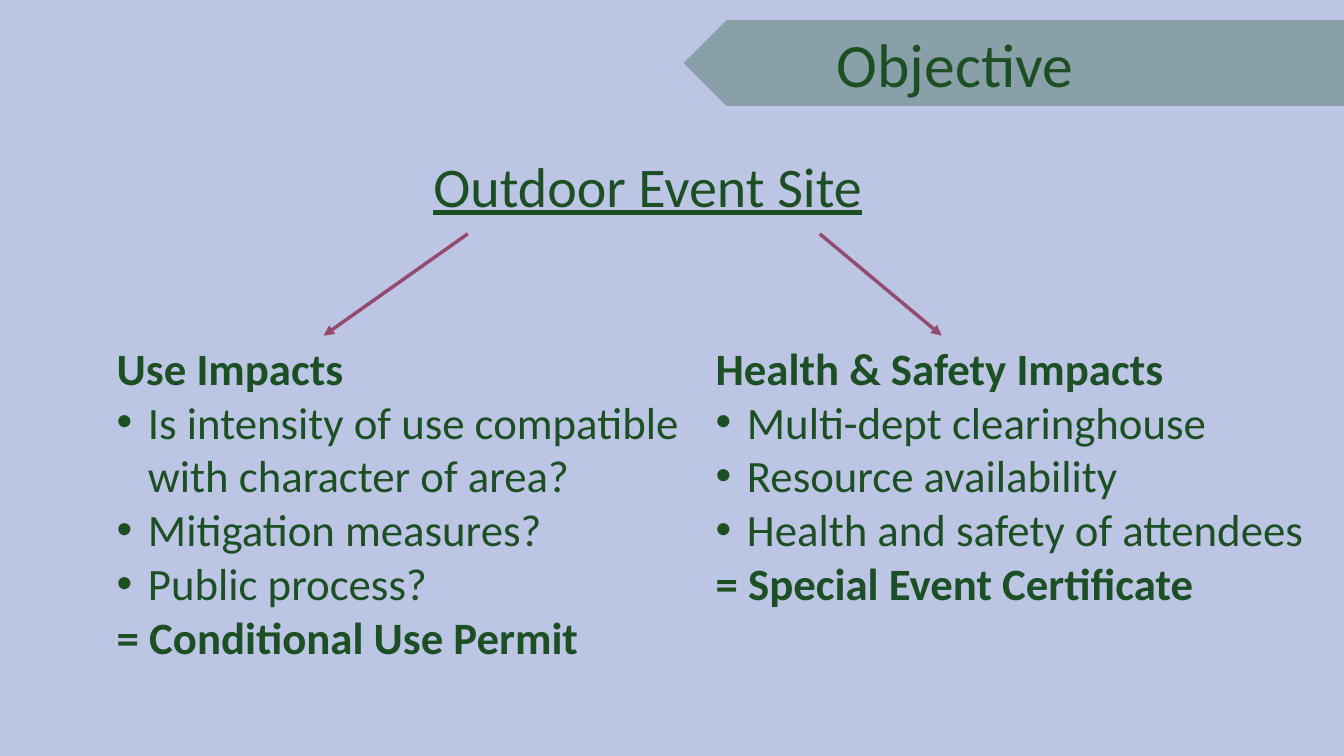
import pptx
import pptx.util
import pptx.dml.color
import pptx.enum.shapes
import pptx.enum.text
import pptx.oxml.ns
import lxml.etree

Inches = pptx.util.Inches
Pt = pptx.util.Pt
RGBColor = pptx.dml.color.RGBColor
MSO_SHAPE = pptx.enum.shapes.MSO_SHAPE
qn = pptx.oxml.ns.qn

BACKGROUND = RGBColor(0xBC, 0xC5, 0xE4)
GREEN = RGBColor(0x1C, 0x4F, 0x24)
PLUM = RGBColor(0x93, 0x4C, 0x6F)
FONT = "Calibri"
INDENT = 0.31


def add_xml(parent, tag, **attributes):
    return lxml.etree.SubElement(parent, qn(tag), attributes)


class SlideBuilder:
    def __init__(self, prs):
        self.s = prs.slides.add_slide(prs.slide_layouts[6])
        fill = self.s.background.fill
        fill.solid()
        fill.fore_color.rgb = BACKGROUND

    def style(self, p, size, bold=False, underline=None):
        p.font.name = FONT
        p.font.size = Pt(size)
        p.font.color.rgb = GREEN
        p.font.bold = bold
        p.font.underline = underline

    def banner(self, left, top, width, height):
        sp = self.s.shapes.add_shape(
            MSO_SHAPE.PENTAGON, Inches(left), Inches(top), Inches(width), Inches(height))
        sp.rotation = 180
        sp.shadow.inherit = False
        sp.fill.solid()
        sp.fill.fore_color.rgb = GREEN
        color = sp.fill._xPr.find(qn("a:solidFill"))[0]
        add_xml(color, "a:alpha", val="31000")
        sp.line.fill.background()

    def text_box(self, left, top, width, height):
        sp = self.s.shapes.add_textbox(
            Inches(left), Inches(top), Inches(width), Inches(height))
        return sp.text_frame

    def title(self, label, left, top, width, height, blank_end):
        tf = self.text_box(left, top, width, height)
        tf.word_wrap = True
        tf.vertical_anchor = pptx.enum.text.MSO_ANCHOR.MIDDLE
        p = tf.paragraphs[0]
        tabs = add_xml(p._p.get_or_add_pPr(), "a:tabLst")
        add_xml(tabs, "a:tab", pos=str(Inches(blank_end)), algn="l")
        self.style(p, 44)
        p.add_run().text = label
        r = p.add_run()
        r.text = "\t"
        r.font.underline = True

    def heading(self, text, left, top, width, height):
        tf = self.text_box(left, top, width, height)
        tf.word_wrap = False
        p = tf.paragraphs[0]
        p.text = text
        self.style(p, 40, underline=True)

    def column(self, lines, left, top, width, height):
        tf = self.text_box(left, top, width, height)
        tf.word_wrap = False
        for i, (kind, text) in enumerate(lines):
            p = tf.paragraphs[0] if i == 0 else tf.add_paragraph()
            p.text = text
            pPr = p._p.get_or_add_pPr()
            if kind != "bold":
                pPr.set("marL", str(Inches(INDENT)))
            if kind == "bullet":
                pPr.set("indent", str(-Inches(INDENT)))
                add_xml(pPr, "a:buFont", typeface="Arial")
                add_xml(pPr, "a:buChar", char="•")
            self.style(p, 32, bold=kind == "bold")

    def arrow(self, x1, y1, x2, y2):
        c = self.s.shapes.add_connector(
            pptx.enum.shapes.MSO_CONNECTOR.STRAIGHT,
            Inches(x1), Inches(y1), Inches(x2), Inches(y2))
        c.line.color.rgb = PLUM
        c.line.width = Pt(2.5)
        add_xml(c.line._get_or_add_ln(), "a:tailEnd", type="triangle")
        add_xml(c._element.spPr, "a:effectLst")


def main():
    prs = pptx.Presentation()
    prs.slide_width = Inches(13.33)
    prs.slide_height = Inches(7.5)
    b = SlideBuilder(prs)
    b.banner(6.78, 0.2, 6.56, 0.85)
    b.title("Objective", 8.2, 0, 4.2, 1.25, blank_end=3.73)
    b.heading("Outdoor Event Site", 4.2, 1.45, 4.5, 0.77)
    b.column([
        ("bold", "Health & Safety Impacts"),
        ("bullet", "Multi-dept clearinghouse"),
        ("bullet", "Resource availability"),
        ("bullet", "Health and safety of attendees"),
        ("bold", "= Special Event Certificate"),
    ], 7, 3.33, 6.1, 2.79)
    b.column([
        ("bold", "Use Impacts"),
        ("bullet", "Is intensity of use compatible"),
        ("continued", "with character of area?"),
        ("bullet", "Mitigation measures?"),
        ("bullet", "Public process?"),
        ("bold", "= Conditional Use Permit"),
    ], 1.06, 3.33, 5.94, 3.33)
    for x1, x2 in ((4.64, 3.21), (8.13, 9.34)):
        b.arrow(x1, 2.32, x2, 3.33)
    prs.save("out.pptx")


if __name__ == "__main__":
    main()
